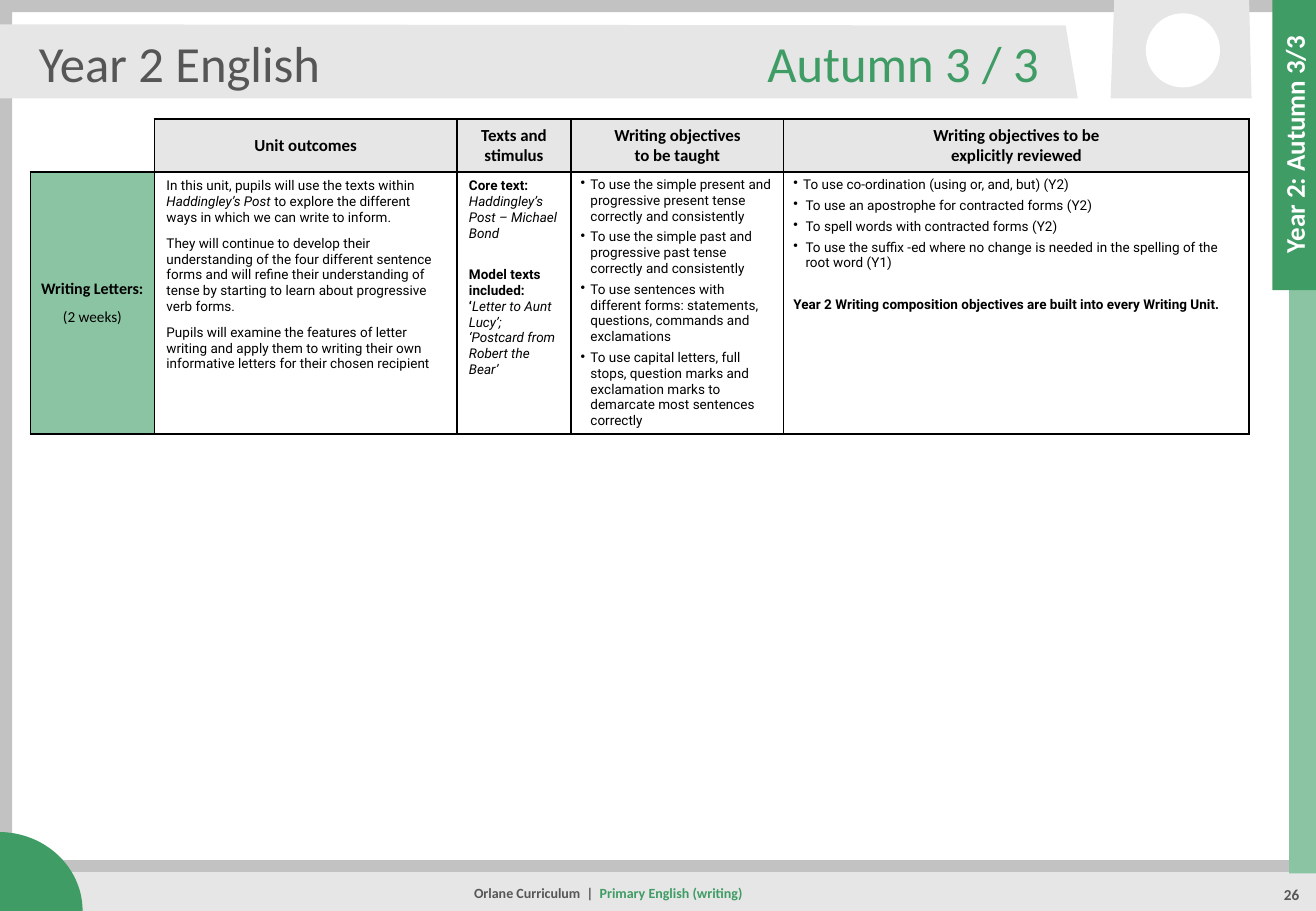
"""Build the Year 2 English Autumn 3 / 3 curriculum slide."""
from dataclasses import dataclass
from typing import Optional

from lxml import etree
from pptx import Presentation
from pptx.dml.color import RGBColor
from pptx.enum.shapes import MSO_CONNECTOR, MSO_SHAPE
from pptx.enum.text import MSO_ANCHOR, MSO_AUTO_SIZE, PP_ALIGN
from pptx.oxml.ns import qn
from pptx.util import Inches, Pt

LEFT, CENTER, RIGHT = PP_ALIGN.LEFT, PP_ALIGN.CENTER, PP_ALIGN.RIGHT
TOP, MIDDLE = MSO_ANCHOR.TOP, MSO_ANCHOR.MIDDLE
RECTANGLE, OVAL, ARC, FRAME = MSO_SHAPE.RECTANGLE, MSO_SHAPE.OVAL, MSO_SHAPE.ARC, MSO_SHAPE.FRAME
NO_AUTOFIT = MSO_AUTO_SIZE.NONE
STRAIGHT = MSO_CONNECTOR.STRAIGHT

GREEN = RGBColor(0x3E, 0x9C, 0x64)
LIGHT_GREEN = RGBColor(0x8B, 0xC4, 0xA2)
DARK_GREY = RGBColor(0x56, 0x56, 0x56)
MID_GREY = RGBColor(0xC2, 0xC2, 0xC2)
LIGHT_GREY = RGBColor(0xE6, 0xE6, 0xE6)
BLACK = RGBColor(0, 0, 0)
WHITE = RGBColor(0xFF, 0xFF, 0xFF)

SLIDE_W, SLIDE_H = 10.83, 7.5
FRAME_WIDTH = 0.1
BLANK_LINE = 12.4
COLUMN_WIDTHS = (1.02, 2.49, 0.94, 1.75, 3.83)
ROW_HEIGHTS = (0.43, 2.15)


@dataclass(frozen=True)
class Span:
    text: str
    bold: Optional[bool] = None
    italic: Optional[bool] = None
    color: Optional[RGBColor] = None


@dataclass(frozen=True)
class Para:
    spans: tuple[Span, ...]
    size: float = 8
    font: str = "Roboto"
    color: Optional[RGBColor] = BLACK
    bold: Optional[bool] = None
    align: PP_ALIGN = LEFT
    before: float = 0
    after: float = 0
    line_spacing: float = 1
    bullet_indent: float = 0


@dataclass(frozen=True)
class CellSpec:
    paras: tuple[Para, ...]
    fill: RGBColor = WHITE
    anchor: MSO_ANCHOR = TOP
    margins: tuple[float, float] = (0.1, 0.05)
    sides: str = "LRTB"


@dataclass(frozen=True)
class Block:
    kind: MSO_SHAPE
    box: tuple[float, float, float, float]
    fill: RGBColor


def heading(text: str) -> CellSpec:
    para = Para((Span(text),), 10, "Calibri", bold=True, align=CENTER, after=3)
    return CellSpec((para,), LIGHT_GREY, MIDDLE, (0.04, 0.05))


def bullet(text: str, indent: float = 0.08) -> Para:
    return Para((Span(text),), after=3, bullet_indent=indent)


def outcome(*spans: Span) -> Para:
    return Para(spans, after=6)


def label(text: str, size: float, color: RGBColor, align: PP_ALIGN, bold: bool = False) -> Para:
    return Para((Span(text),), size, "Calibri", color, bold, align)


HEADINGS = (
    CellSpec((), sides="RB"),
    heading("Unit outcomes"),
    heading("Texts and stimulus"),
    heading("Writing objectives\nto be taught"),
    heading("Writing objectives to be\nexplicitly reviewed"),
)
UNIT = (
    CellSpec((
        Para((Span("Writing Letters:"),), 9.5, "Calibri", bold=True, align=CENTER, after=6),
        Para((Span("(2 weeks)"),), 9, "Calibri", align=CENTER, after=6),
    ), LIGHT_GREEN, MIDDLE, (0.08, 0.04)),
    CellSpec((
        outcome(Span("In this unit, pupils will use the texts within "),
                Span("Haddingley’s Post ", italic=True),
                Span("to explore the different ways in which we can write to inform.")),
        outcome(Span("They will continue to develop their understanding of the four different sentence "
                     "forms and will refine their understanding of tense by starting to learn about "
                     "progressive verb forms.")),
        outcome(Span("Pupils will examine the features of letter writing and apply them to writing "
                     "their own informative letters for their chosen recipient")),
    )),
    CellSpec((
        Para((Span("Core text: ", bold=True),
              Span("Haddingley’s Post – Michael Bond", italic=True)), after=3),
        Para((Span("Model texts included: ‘", bold=True),
              Span("Letter to Aunt Lucy’; ‘Postcard from Robert the Bear’", italic=True)),
             before=BLANK_LINE, after=3),
    )),
    CellSpec((
        bullet("To use the simple present and progressive present tense correctly and consistently"),
        bullet("To use the simple past and progressive past tense correctly and consistently"),
        bullet("To use sentences with different forms: statements, questions, commands and exclamations"),
        bullet("To use capital letters, full stops, question marks and exclamation marks to "
               "demarcate most sentences correctly"),
    ), margins=(0.08, 0.04)),
    CellSpec((
        bullet("To use co-ordination (using or, and, but) (Y2)"),
        bullet("To use an apostrophe for contracted forms (Y2)", 0.1),
        bullet("To spell words with contracted forms (Y2)", 0.1),
        bullet("To use the suffix -ed where no change is needed in the spelling of the root word (Y1)", 0.1),
        Para((Span("Year 2 Writing composition objectives are built into every Writing Unit."),),
             bold=True, before=BLANK_LINE, after=3),
    ), margins=(0.08, 0.04)),
)
SIDE_TABS = (
    Block(RECTANGLE, (10.61, -0.01, 0.24, 7.2), LIGHT_GREEN),
    Block(RECTANGLE, (10.47, -0.01, 0.39, 2.4), GREEN),
)
BANNER = ((0, 0.2), (8.77, 0.21), (8.87, 0.81), (0, 0.81))
BADGE = ((9.17, 0), (10.28, 0), (10.3, 0.81), (9.14, 0.81))


def paint(shape, fill: RGBColor) -> None:
    shape.shadow.inherit = False
    shape.fill.solid()
    shape.fill.fore_color.rgb = fill
    shape.line.fill.background()


def add_block(slide, block: Block):
    shape = slide.shapes.add_shape(block.kind, *map(Inches, block.box))
    paint(shape, block.fill)
    return shape


def add_outline(slide, points: tuple[tuple[float, float], ...], fill: RGBColor) -> None:
    builder = slide.shapes.build_freeform(*map(Inches, points[0]), scale=1.0)
    builder.add_line_segments([(Inches(x), Inches(y)) for x, y in points[1:]], close=True)
    paint(builder.convert_to_shape(), fill)


def write(frame, paras: tuple[Para, ...]) -> None:
    for index, spec in enumerate(paras):
        para = frame.add_paragraph() if index else frame.paragraphs[0]
        para.alignment, para.line_spacing = spec.align, spec.line_spacing
        para.space_before, para.space_after = Pt(spec.before), Pt(spec.after)
        props = para._p.get_or_add_pPr()
        props.set("marL", str(Inches(spec.bullet_indent)))
        props.set("indent", str(-Inches(spec.bullet_indent)))
        if spec.bullet_indent:
            etree.SubElement(props, qn("a:buChar")).set("char", "•")
        else:
            etree.SubElement(props, qn("a:buNone"))
        para.font.size, para.font.name, para.font.bold = Pt(spec.size), spec.font, spec.bold
        if spec.color is not None:
            para.font.color.rgb = spec.color
        for span in spec.spans:
            for number, line in enumerate(span.text.split("\n")):
                if number:
                    para.add_line_break()
                run = para.add_run()
                run.text = line
                run.font.bold, run.font.italic = span.bold, span.italic
                if span.color is not None:
                    run.font.color.rgb = span.color


def fill_text(shape, box: tuple[float, float, float, float], para: Para) -> None:
    shape.left, shape.top, shape.width, shape.height = map(Inches, box)
    frame = shape.text_frame
    frame.word_wrap, frame.auto_size, frame.vertical_anchor = True, NO_AUTOFIT, MIDDLE
    frame.margin_left = frame.margin_right = Inches(0.1)
    write(frame, (para,))


def add_label(slide, box: tuple[float, float, float, float], para: Para) -> None:
    fill_text(slide.shapes.add_textbox(*map(Inches, box)), box, para)


def fill_cell(cell, spec: CellSpec) -> None:
    props = cell._tc.get_or_add_tcPr()
    for side in spec.sides:
        border = etree.SubElement(props, qn(f"a:ln{side}"), w=str(Pt(1)))
        etree.SubElement(etree.SubElement(border, qn("a:solidFill")), qn("a:srgbClr"), val=str(BLACK))
    cell.fill.solid()
    cell.fill.fore_color.rgb = spec.fill
    cell.vertical_anchor = spec.anchor
    cell.margin_left = cell.margin_right = Inches(spec.margins[0])
    cell.margin_top = cell.margin_bottom = Inches(spec.margins[1])
    write(cell.text_frame, spec.paras)


def add_unit_table(slide) -> None:
    table = slide.shapes.add_table(2, 5, Inches(0.25), Inches(0.98), Inches(sum(COLUMN_WIDTHS)),
                                   Inches(sum(ROW_HEIGHTS))).table
    table.first_row = table.horz_banding = False
    for column, width in zip(table.columns, COLUMN_WIDTHS):
        column.width = Inches(width)
    for row, height, specs in zip(table.rows, ROW_HEIGHTS, (HEADINGS, UNIT)):
        row.height = Inches(height)
        for cell, spec in zip(row.cells, specs):
            fill_cell(cell, spec)


def main() -> None:
    deck = Presentation()
    deck.slide_width, deck.slide_height = Inches(SLIDE_W), Inches(SLIDE_H)
    slide = deck.slides.add_slide(deck.slide_layouts[1])
    subject, term_tab = slide.placeholders

    page_frame = add_block(slide, Block(FRAME, (0, 0, SLIDE_W, SLIDE_H), MID_GREY))
    page_frame.adjustments[0] = FRAME_WIDTH / SLIDE_H
    add_block(slide, Block(RECTANGLE, (0.32, 7.18, 10.51, 0.32), LIGHT_GREY))
    footer_rule = slide.shapes.add_connector(STRAIGHT, *map(Inches, (0.05, 7.13, SLIDE_W, 7.13)))
    footer_rule.line.color.rgb, footer_rule.line.width = MID_GREY, Pt(7)
    etree.SubElement(footer_rule.element.spPr, qn("a:effectLst"))
    add_block(slide, Block(ARC, (-0.7, 6.85, 1.38, 1.3), GREEN))
    add_label(slide, (2.05, 7.21, 5.91, 0.3), Para(
        (Span("Orlane Curriculum  |  ", color=DARK_GREY), Span("Primary English (writing)", color=GREEN)),
        8.3, "Calibri", None, True, CENTER, line_spacing=0.9))
    add_outline(slide, BANNER, LIGHT_GREY)
    for tab in SIDE_TABS:
        add_block(slide, tab)
    add_label(slide, (10.43, 7.22, 0.4, 0.28), label("26", 9, DARK_GREY, CENTER, True))
    add_outline(slide, BADGE, LIGHT_GREY)
    add_block(slide, Block(OVAL, (9.43, 0.11, 0.61, 0.61), WHITE))
    add_unit_table(slide)

    fill_text(term_tab, (9.46, 1.02, 2.38, 0.34), label("Year 2: Autumn 3/3", 16, WHITE, CENTER, True))
    term_tab.rotation = 270
    fill_text(subject, (0.22, 0.26, 3.21, 0.5), label("Year 2 English", 30, DARK_GREY, LEFT))
    for placeholder in (term_tab, subject):
        placeholder.element.getparent().append(placeholder.element)
    add_label(slide, (5.28, 0.26, 3.37, 0.5), label("Autumn 3 / 3", 30, GREEN, RIGHT))
    deck.save("out.pptx")


if __name__ == "__main__":
    main()
